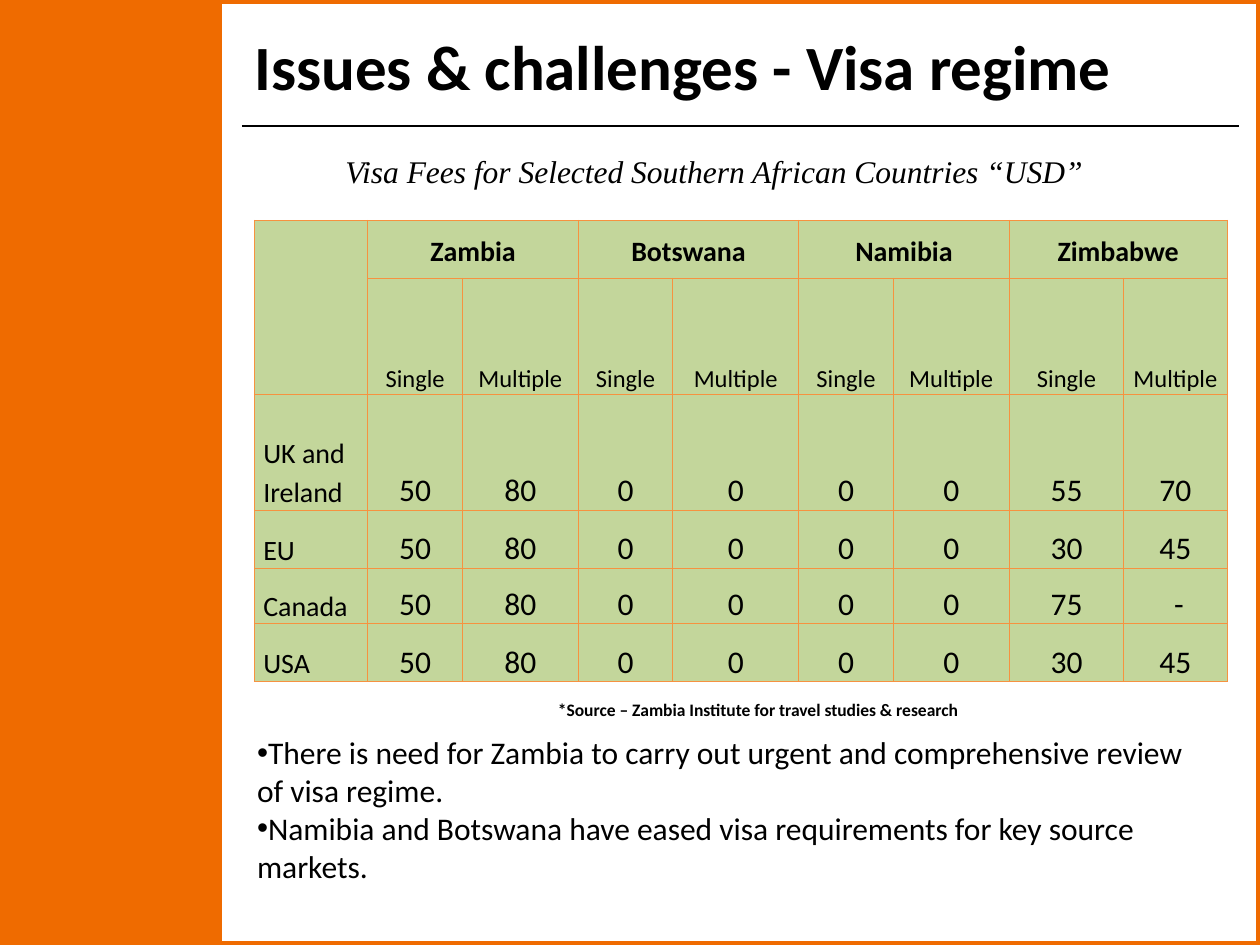
"""Build the visa regime slide with its fee table and conclusions."""
import pptx
import pptx.util
import pptx.dml.color
import pptx.enum.shapes
import pptx.enum.text
import pptx.oxml
import pptx.oxml.ns

Inches, Pt = pptx.util.Inches, pptx.util.Pt
ALIGN, ANCHOR = pptx.enum.text.PP_ALIGN, pptx.enum.text.MSO_ANCHOR
AUTO = pptx.enum.text.MSO_AUTO_SIZE
NS = pptx.oxml.ns.nsdecls("a")

COLORS = {"orange": "EF6B00", "border": "F69240", "cell": "C3D69B",
          "text": "000000"}
TITLE = "Issues & challenges - Visa regime"
SUBTITLE = "Visa Fees for Selected Southern African Countries “USD”"
SOURCE = "*Source – Zambia Institute for travel studies & research"
COUNTRIES = ["Zambia", "Botswana", "Namibia", "Zimbabwe"]
ENTRIES = ["Single", "Multiple"]
FEES = [
    ("UK and Ireland", 50, 80, 0, 0, 0, 0, 55, 70),
    ("EU", 50, 80, 0, 0, 0, 0, 30, 45),
    ("Canada", 50, 80, 0, 0, 0, 0, 75, " -"),
    ("USA", 50, 80, 0, 0, 0, 0, 30, 45),
]
CONCLUSIONS = [
    "There is need for Zambia to carry out urgent and comprehensive review of visa regime.",
    "Namibia and Botswana have eased visa requirements for key source markets.",
]
COL_WIDTHS = [0.9, 0.75, 0.92, 0.75, 1, 0.75, 0.92, 0.91, 0.82]
ROW_HEIGHTS = [0.46, 0.92, 0.92, 0.46, 0.44, 0.46]


def rgb(name):
    return pptx.dml.color.RGBColor.from_string(COLORS[name])


def write(p, text, size, font="Calibri", bold=False, italic=False, align=ALIGN.LEFT):
    p.alignment = align
    r = p.add_run()
    r.text = text
    r.font.name, r.font.size = font, Pt(size)
    r.font.bold, r.font.italic = bold, italic
    r.font.color.rgb = rgb("text")


def place(sp, x, y, w, h, wrap=True, anchor=ANCHOR.TOP, auto=AUTO.SHAPE_TO_FIT_TEXT):
    sp.left, sp.top, sp.width, sp.height = map(Inches, (x, y, w, h))
    tf = sp.text_frame
    tf.word_wrap, tf.auto_size, tf.vertical_anchor = wrap, auto, anchor
    return tf


def add_box(s, *box, **options):
    return place(s.shapes.add_textbox(0, 0, 0, 0), *box, **options).paragraphs[0]


def add_panel(s, width, line_width, filled):
    sp = s.shapes.add_shape(pptx.enum.shapes.MSO_SHAPE.RECTANGLE, 0, 0,
                            Inches(width), Inches(7.5))
    sp.shadow.inherit = False
    if filled:
        sp.fill.solid()
        sp.fill.fore_color.rgb = rgb("orange")
    else:
        sp.fill.background()
    sp.line.color.rgb = rgb("orange")
    sp.line.width = Pt(line_width)


def style_cell(cell):
    cell.fill.solid()
    cell.fill.fore_color.rgb = rgb("cell")
    cell.margin_left = cell.margin_right = Inches(0.07)
    cell.margin_top = cell.margin_bottom = 0
    cell.vertical_anchor = ANCHOR.BOTTOM
    tc_pr = cell._tc.get_or_add_tcPr()
    for i, side in enumerate("LRTB"):
        tc_pr.insert(i, pptx.oxml.parse_xml(
            f'<a:ln{side} {NS} w="{Pt(0.75)}"><a:solidFill>'
            f'<a:srgbClr val="{COLORS["border"]}"/></a:solidFill></a:ln{side}>'))


def fill_cell(cell, text, size, bold=False, align=ALIGN.CENTER):
    p = cell.text_frame.paragraphs[0]
    p.line_spacing = 1.15
    write(p, str(text), size, bold=bold, align=align)


def add_fee_table(s):
    table = s.shapes.add_table(
        len(ROW_HEIGHTS), len(COL_WIDTHS), Inches(2.02), Inches(1.75),
        Inches(sum(COL_WIDTHS)), Inches(sum(ROW_HEIGHTS))).table
    table.first_row = table.horz_banding = False
    for column, width in zip(table.columns, COL_WIDTHS):
        column.width = Inches(width)
    for row, height in zip(table.rows, ROW_HEIGHTS):
        row.height = Inches(height)
    for cell in table.iter_cells():
        style_cell(cell)
    table.cell(0, 0).merge(table.cell(1, 0))
    for i, country in enumerate(COUNTRIES):
        col = 1 + 2 * i
        head = table.cell(0, col)
        head.merge(table.cell(0, col + 1))
        head.vertical_anchor = ANCHOR.MIDDLE
        fill_cell(head, country, 16, bold=True)
        for j, entry in enumerate(ENTRIES):
            fill_cell(table.cell(1, col + j), entry, 14)
    for i, (origin, *fees) in enumerate(FEES, 2):
        fill_cell(table.cell(i, 0), origin, 16, align=ALIGN.LEFT)
        for j, fee in enumerate(fees, 1):
            fill_cell(table.cell(i, j), fee, 18)


def add_conclusions(sp):
    tf = place(sp, 1.94, 5.77, 7.56, 1.31)
    for i, text in enumerate(CONCLUSIONS):
        p = tf.add_paragraph() if i else tf.paragraphs[0]
        p.space_before = Pt(0)
        write(p, text, 18)
        p_pr = p._p.get_or_add_pPr()
        p_pr.set("marL", "0")
        p_pr.set("indent", "0")
        p_pr.append(pptx.oxml.parse_xml(f'<a:buFont {NS} typeface="Arial"/>'))
        p_pr.append(pptx.oxml.parse_xml(f'<a:buChar {NS} char="•"/>'))


def main():
    prs = pptx.Presentation()
    prs.slide_width, prs.slide_height = Inches(10), Inches(7.5)
    s = prs.slides.add_slide(prs.slide_layouts[1])
    add_panel(s, 10, 5, filled=False)
    add_panel(s, 1.75, 2, filled=True)
    rule = s.shapes.add_connector(pptx.enum.shapes.MSO_CONNECTOR.STRAIGHT,
                                  Inches(1.92), Inches(1), Inches(9.83), Inches(1))
    rule.line.color.rgb = rgb("text")
    rule.line.width = Pt(1)
    rule._element.spPr.append(pptx.oxml.parse_xml(f"<a:effectLst {NS}/>"))
    title = place(s.shapes.title, 1.92, 0.17, 7.92, 0.71)
    write(title.paragraphs[0], TITLE, 36, bold=True)
    write(add_box(s, 2.42, 1.16, 6.5, 0.4, anchor=ANCHOR.MIDDLE), SUBTITLE, 18,
          font="Times New Roman", italic=True, align=ALIGN.CENTER)
    add_fee_table(s)
    write(add_box(s, 4.33, 5.5, 3.48, 0.27, wrap=False), SOURCE, 10, bold=True)
    add_conclusions(s.placeholders[1])
    prs.save("out.pptx")


if __name__ == "__main__":
    main()
